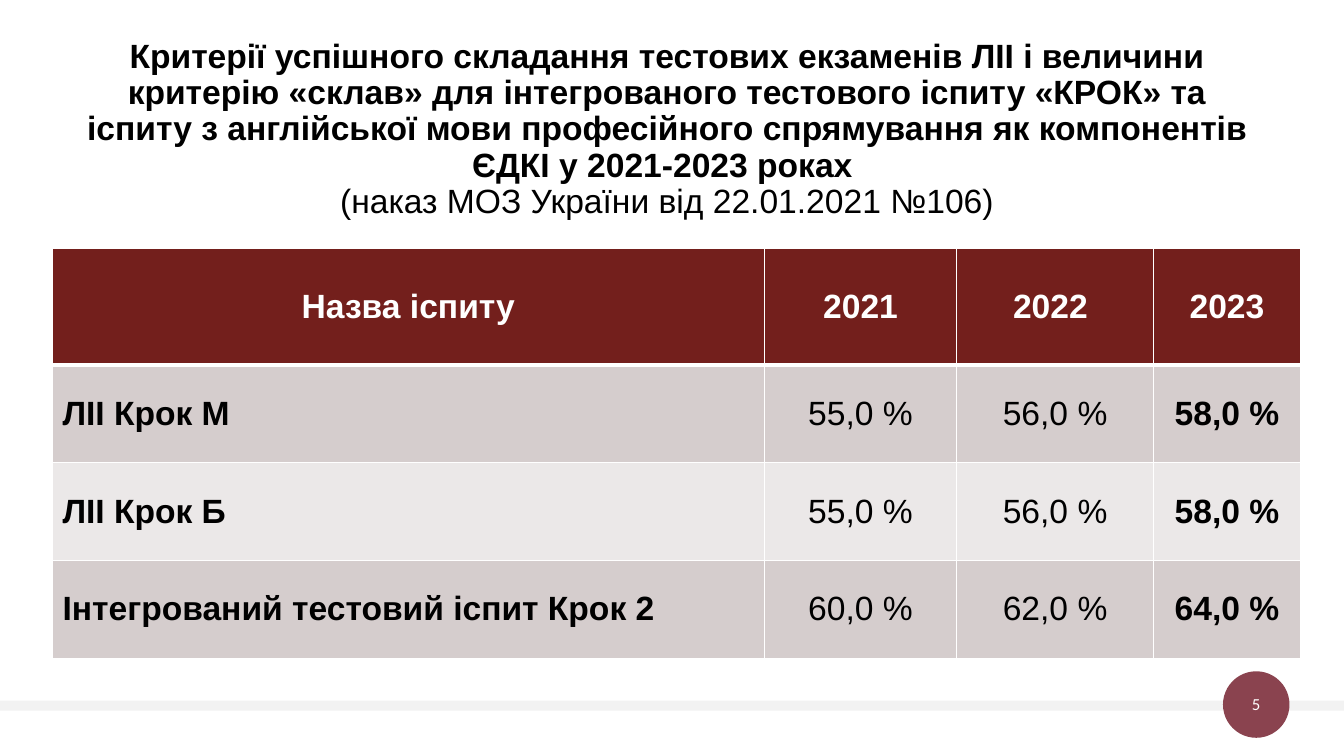
from lxml import etree
from pptx import Presentation
from pptx.dml.color import RGBColor
from pptx.enum.shapes import MSO_SHAPE
from pptx.enum.text import MSO_ANCHOR, PP_ALIGN
from pptx.oxml.ns import qn
from pptx.util import Inches, Pt

RECT, OVAL = MSO_SHAPE.RECTANGLE, MSO_SHAPE.OVAL
LEFT, CENTER = PP_ALIGN.LEFT, PP_ALIGN.CENTER
TOP, MIDDLE = MSO_ANCHOR.TOP, MSO_ANCHOR.MIDDLE

WHITE, BLACK = "FFFFFF", "000000"
HEADER_FILL = "731F1C"
BAND_FILLS = ("D5CDCD", "EBE8E8")

TITLE = (
    "Критерії успішного складання тестових екзаменів ЛІІ і величини "
    "критерію «склав» для інтегрованого тестового іспиту «КРОК» та "
    "іспиту з англійської мови професійного спрямування як компонентів "
    "ЄДКІ у 2021-2023 роках "
)
ORDER = "(наказ МОЗ України від 22.01.2021 №106)"
EXAMS = [
    ("Назва іспиту", "2021", "2022 ", "2023"),
    ("ЛІІ Крок М", "55,0 %", "56,0 %", "58,0 %"),
    ("ЛІІ Крок Б", "55,0 %", "56,0 %", "58,0 %"),
    ("Інтегрований тестовий іспит Крок 2", "60,0 %", "62,0 %", "64,0 %"),
]
COL_WIDTHS = (7.06, 1.91, 1.95, 1.46)
ROW_HEIGHTS = (1.16, 0.97, 0.97, 0.97)


def rgb(value):
    return RGBColor.from_string(value)


def set_borders(cell, **widths):
    """Draw white cell borders; widths are points keyed by side L, R, T, B."""
    tc_pr = cell._tc.get_or_add_tcPr()
    for i, side in enumerate("LRTB"):
        ln = etree.Element(qn(f"a:ln{side}"), w=str(Pt(widths.get(side, 1))))
        fill = etree.SubElement(ln, qn("a:solidFill"))
        etree.SubElement(fill, qn("a:srgbClr"), val=WHITE)
        tc_pr.insert(i, ln)


class SlideBuilder:
    font = {"name": "Arial", "size": Pt(24), "bold": True}

    def __init__(self, slide):
        self.s = slide

    def run(self, p, text, color=BLACK, **changes):
        r = p.add_run()
        r.text = text
        for key, value in {**self.font, **changes}.items():
            setattr(r.font, key, value)
        r.font.color.rgb = rgb(color)

    def shape(self, kind, box, fill):
        sp = self.s.shapes.add_shape(kind, *map(Inches, box))
        sp.shadow.inherit = False
        sp.fill.solid()
        sp.fill.fore_color.rgb = rgb(fill)
        sp.line.fill.background()

    def text_box(self, box, margins, anchor):
        """Add a wrapped box and return its centred first paragraph."""
        tf = self.s.shapes.add_textbox(*map(Inches, box)).text_frame
        tf.word_wrap = True
        tf.vertical_anchor = anchor
        for side, size in zip(("left", "top", "right", "bottom"), margins):
            setattr(tf, f"margin_{side}", Inches(size))
        p = tf.paragraphs[0]
        p.alignment = CENTER
        return p

    def table(self, box, rows):
        tbl = self.s.shapes.add_table(
            len(rows), len(rows[0]), *map(Inches, box)).table
        for col, width in zip(tbl.columns, COL_WIDTHS):
            col.width = Inches(width)
        for row, height in zip(tbl.rows, ROW_HEIGHTS):
            row.height = Inches(height)
        for i, values in enumerate(rows):
            for j, text in enumerate(values):
                self.cell(tbl.cell(i, j), text, i, j, len(values) - 1)

    def cell(self, cell, text, i, j, last):
        header = i == 0
        cell.vertical_anchor = MIDDLE
        cell.fill.solid()
        cell.fill.fore_color.rgb = rgb(
            HEADER_FILL if header else BAND_FILLS[(i - 1) % 2])
        set_borders(cell, T=3 if i == 1 else 1, B=3 if header else 1)
        p = cell.text_frame.paragraphs[0]
        p.alignment = CENTER if header or j else LEFT
        self.run(p, text, WHITE if header else BLACK,
                 bold=header or j in (0, last))


def main():
    prs = Presentation()
    prs.slide_width, prs.slide_height = Inches(13.33), Inches(7.5)
    b = SlideBuilder(prs.slides.add_slide(prs.slide_layouts[6]))

    b.shape(RECT, (0, 6.95, 13.33, 0.1), "F2F2F2")
    b.shape(OVAL, (12.13, 6.66, 0.66, 0.66), "8A434F")
    p = b.text_box((12.13, 6.77, 0.66, 0.43), (0, 0, 0, 0), MIDDLE)
    b.run(p, "5", WHITE, name="Calibri", size=Pt(12), bold=False)

    p = b.text_box((0.75, 0.34, 11.83, 1.92), (0, 0.05, 0.1, 0.05), TOP)
    p.line_spacing = 0.9
    b.run(p, TITLE)
    p.add_line_break()
    b.run(p, ORDER, bold=False)

    b.table((0.52, 2.46, sum(COL_WIDTHS), sum(ROW_HEIGHTS)), EXAMS)
    prs.save("out.pptx")


if __name__ == "__main__":
    main()
